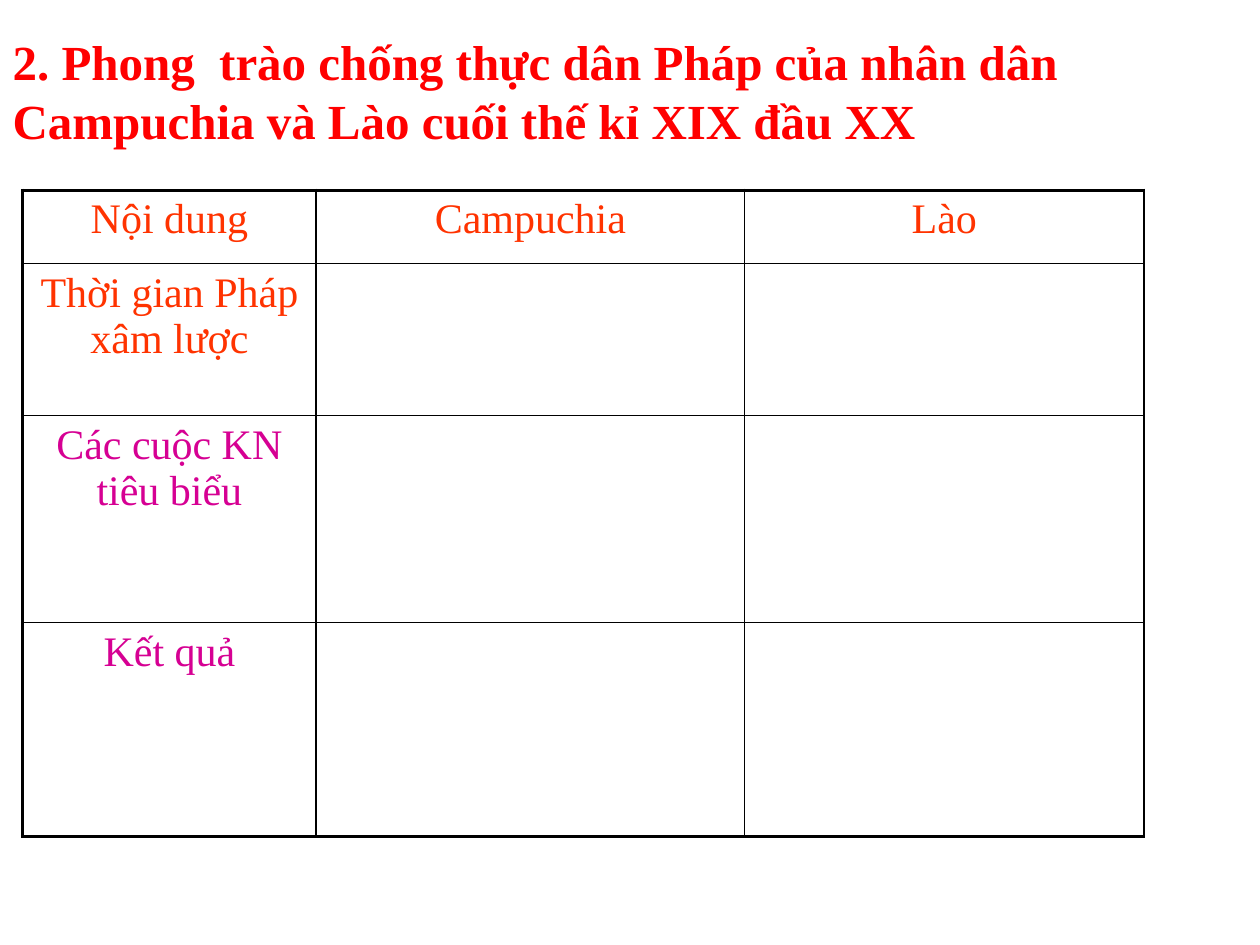
from pptx import Presentation
from pptx import util as u
from pptx.dml import color
from pptx.enum import text
from pptx.oxml import xmlchemy


def rgb(value):
    return color.RGBColor.from_string(value)


class LessonSlide:
    font = "Times New Roman"
    ink = "000000"
    thin, thick = 1, 2.25

    def __init__(self, deck):
        self.page = deck.slides.add_slide(deck.slide_layouts[5])

    def add_words(self, frame, words, size, hue, align, bold=False):
        para = frame.paragraphs[0]
        para.alignment = align
        span = para.add_run()
        span.text = words
        style = {"name": self.font, "size": u.Pt(size), "bold": bold}
        for name, value in style.items():
            setattr(span.font, name, value)
        span.font.color.rgb = rgb(hue)

    def title(self, words, left, top, width, height):
        box = self.page.shapes.title
        place = {"left": left, "top": top, "width": width, "height": height}
        for name, value in place.items():
            setattr(box, name, u.Inches(value))
        frame = box.text_frame
        layout = {"word_wrap": True, "auto_size": text.MSO_AUTO_SIZE.NONE,
                  "vertical_anchor": text.MSO_ANCHOR.TOP}
        for name, value in layout.items():
            setattr(frame, name, value)
        self.add_words(frame, words, 28, "FF0000", text.PP_ALIGN.LEFT, True)

    def border(self, cell, side, width):
        props = cell._tc.get_or_add_tcPr()
        line = xmlchemy.OxmlElement(f"a:ln{side}")
        line.set("w", str(u.Pt(width)))
        fill = xmlchemy.OxmlElement("a:solidFill")
        hue = xmlchemy.OxmlElement("a:srgbClr")
        hue.set("val", self.ink)
        fill.append(hue)
        line.append(fill)
        props.append(line)

    def table(self, rows, hues, left, top, widths, heights):
        box = self.page.shapes.add_table(
            len(heights), len(widths), u.Inches(left), u.Inches(top),
            u.Inches(sum(widths)), u.Inches(sum(heights)))
        grid = box.table
        grid.first_row = grid.horz_banding = False
        for column, width in zip(grid.columns, widths):
            column.width = u.Inches(width)
        for row, height in zip(grid.rows, heights):
            row.height = u.Inches(height)

        last = len(heights) - 1
        for r, words in enumerate(rows):
            for c in range(len(widths)):
                cell = grid.cell(r, c)
                # Thick outer edges on the left, top and bottom
                heavy = {"L": c == 0, "R": False, "T": r == 0, "B": r == last}
                for side, is_heavy in heavy.items():
                    self.border(cell, side, self.thick if is_heavy else self.thin)
                cell.fill.background()
                if c < len(words):
                    self.add_words(cell.text_frame, words[c], 24, hues[r],
                                   text.PP_ALIGN.CENTER)


def main():
    deck = Presentation()
    deck.slide_width, deck.slide_height = u.Inches(10), u.Inches(7.5)
    lesson = LessonSlide(deck)

    # Heading
    lesson.title("2. Phong  trào chống thực dân Pháp của nhân dân "
                 "Campuchia và Lào cuối thế kỉ XIX đầu XX", 0, 0.2, 10, 1.04)

    # Comparison table with answers left open
    rows = [["Nội dung", "Campuchia", "Lào"],
            ["Thời gian Pháp xâm lược"],
            ["Các cuộc KN tiêu biểu"],
            ["Kết quả"]]
    hues = ["FF3300", "FF3300", "D60093", "D60093"]
    lesson.table(rows, hues, 0.18, 1.51, [2.33, 3.4, 3.17],
                 [0.58, 1.21, 1.64, 1.7])

    deck.save("out.pptx")


if __name__ == "__main__":
    main()
